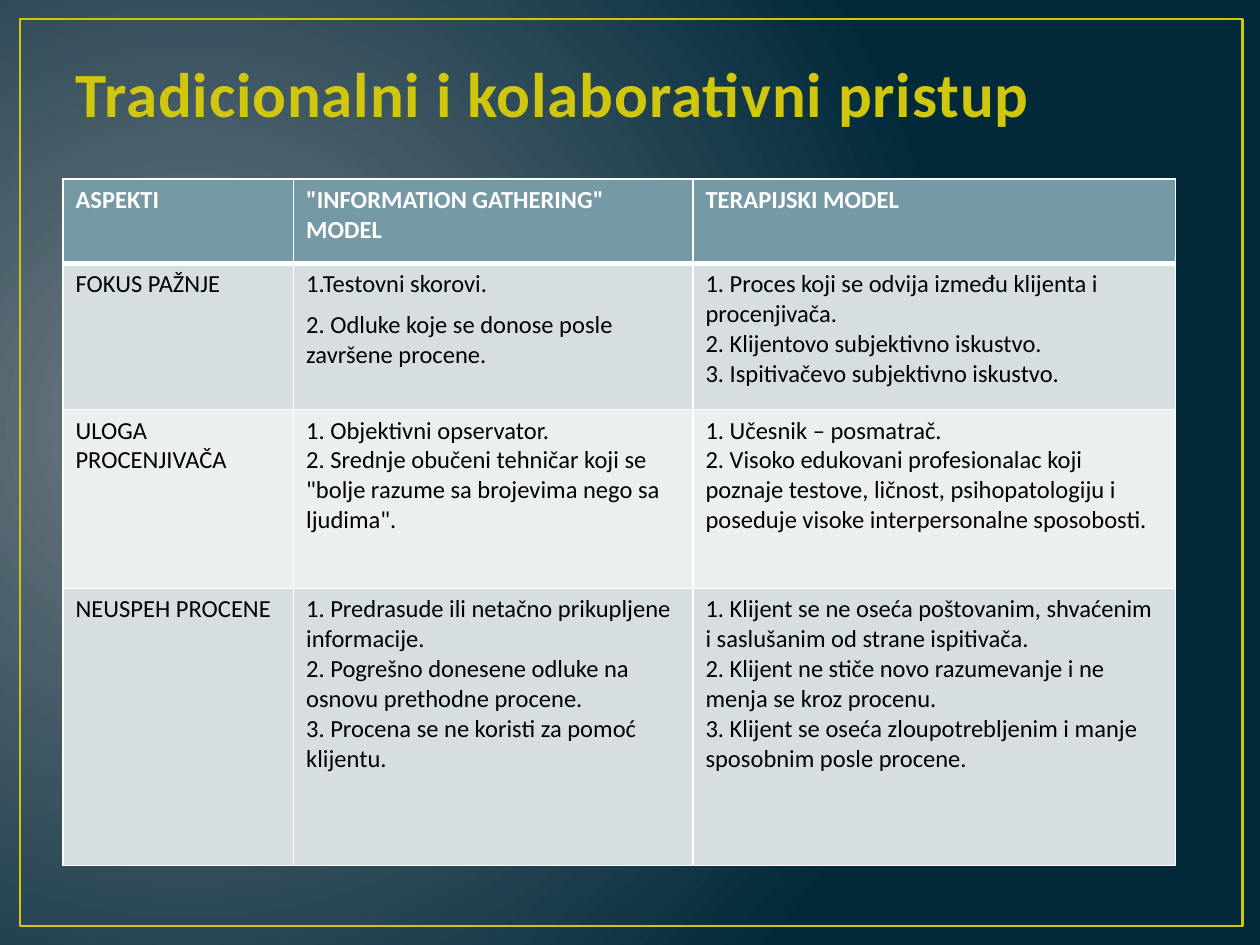
import copy

import pptx
import pptx.dml.color
import pptx.enum.shapes
import pptx.enum.text
import pptx.oxml
import pptx.oxml.ns
import pptx.util
from pptx.util import Inches

RGBColor = pptx.dml.color.RGBColor
YELLOW = RGBColor(0xCF, 0xC6, 0x0D)
WHITE = RGBColor(0xFF, 0xFF, 0xFF)
BLACK = RGBColor(0x00, 0x00, 0x00)
SLATE = RGBColor(0x38, 0x4F, 0x55)
HEADER = RGBColor(0x75, 0x9A, 0xA5)
BANDS = [RGBColor(0xEC, 0xEF, 0xF0), RGBColor(0xD6, 0xDE, 0xE1)]
GLOW = RGBColor(0x71, 0x7C, 0x84)
NAVY = RGBColor(0x01, 0x29, 0x3A)
NS = pptx.oxml.ns.nsdecls("a")


def line_xml(tag, color, points):
    return pptx.oxml.parse_xml(
        f'<a:{tag} {NS} w="{pptx.util.Pt(points)}"><a:solidFill>'
        f'<a:srgbClr val="{color}"/></a:solidFill></a:{tag}>')


def format_font(font, **values):
    font.name = "Calibri"
    font.color.rgb = values.pop("color")
    for name, value in values.items():
        setattr(font, name, value)


prs = pptx.Presentation()
prs.slide_width, prs.slide_height = Inches(10), Inches(7.5)
s = prs.slides.add_slide(prs.slide_layouts[5])

# Background: circular glow from the left
s.background.fill.solid()
solid = s.background.fill._xPr.find(pptx.oxml.ns.qn("a:solidFill"))
solid.getparent().replace(solid, pptx.oxml.parse_xml(
    f'<a:gradFill {NS} rotWithShape="1"><a:gsLst>'
    f'<a:gs pos="0"><a:srgbClr val="{GLOW}"/></a:gs>'
    f'<a:gs pos="100000"><a:srgbClr val="{NAVY}"/></a:gs></a:gsLst>'
    '<a:path path="circle"><a:fillToRect l="15000" t="50000" r="85000" b="60000"/>'
    '</a:path></a:gradFill>'))

# Frame
frame = s.shapes.add_shape(pptx.enum.shapes.MSO_SHAPE.RECTANGLE,
                           Inches(0.16), Inches(0.15), Inches(9.7), Inches(7.2))
frame.shadow.inherit = False
frame.fill.background()
frame.line.color.rgb = YELLOW
frame.line.width = pptx.util.Pt(1.5)

# Title
title = s.shapes.title
title.left, title.top = Inches(0.5), Inches(0.3)
title.width, title.height = Inches(9), Inches(0.78)
tf = title.text_frame
tf.text = "Tradicionalni i kolaborativni pristup"
tf.vertical_anchor = pptx.enum.text.MSO_ANCHOR.BOTTOM
p = tf.paragraphs[0]
p.alignment = pptx.enum.text.PP_ALIGN.LEFT
r = p.runs[0]
format_font(r.font, color=YELLOW, size=pptx.util.Pt(36), bold=True)
rPr = r._r.get_or_add_rPr()
rPr.set("spc", "50")
rPr.insert(0, line_xml("ln", SLATE, 1.05))

# Table: each cell is a list of paragraphs, \n is a line break
COLUMNS = [1.83, 3.17, 3.83]
ROWS = [0.67, 1.16, 1.42, 2.2]
CELLS = [
    [["ASPEKTI"], ['"INFORMATION GATHERING" MODEL'], ["TERAPIJSKI MODEL"]],
    [["FOKUS PAŽNJE"],
     ["1.Testovni skorovi.", "2. Odluke koje se donose posle završene procene."],
     ["1. Proces koji se odvija između klijenta i procenjivača. \n"
      "2. Klijentovo subjektivno iskustvo. \n"
      "3. Ispitivačevo subjektivno iskustvo."]],
    [["ULOGA PROCENJIVAČA"],
     ["1. Objektivni opservator. \n"
      '2. Srednje obučeni tehničar koji se "bolje razume sa brojevima nego sa ljudima".'],
     ["1. Učesnik – posmatrač. \n"
      "2. Visoko edukovani profesionalac koji poznaje testove, ličnost, "
      "psihopatologiju i poseduje visoke interpersonalne sposobosti."]],
    [["NEUSPEH PROCENE"],
     ["1. Predrasude ili netačno prikupljene informacije. \n"
      "2. Pogrešno donesene odluke na osnovu prethodne procene. \n"
      "3. Procena se ne koristi za pomoć klijentu."],
     ["1. Klijent se ne oseća poštovanim, shvaćenim i saslušanim od strane ispitivača. \n"
      "2. Klijent ne stiče novo razumevanje i ne menja se kroz procenu. \n"
      "3. Klijent se oseća zloupotrebljenim i manje sposobnim posle procene."]],
]
table = s.shapes.add_table(len(ROWS), len(COLUMNS), Inches(0.5), Inches(1.42),
                           Inches(sum(COLUMNS)), Inches(sum(ROWS))).table
for column, width in zip(table.columns, COLUMNS):
    column.width = Inches(width)

for i, height in enumerate(ROWS):
    table.rows[i].height = Inches(height)
    is_header = i == 0
    for j, paragraphs in enumerate(CELLS[i]):
        cell = table.cell(i, j)
        cell.fill.solid()
        cell.fill.fore_color.rgb = HEADER if is_header else BANDS[i % 2]
        borders = {"lnL": 1, "lnR": 1, "lnT": 3 if i == 1 else 1,
                   "lnB": 3 if is_header else 1}
        for k, (tag, points) in enumerate(borders.items()):
            cell._tc.get_or_add_tcPr().insert(k, line_xml(tag, WHITE, points))
        tf = cell.text_frame
        for k, text in enumerate(paragraphs):
            p = tf.add_paragraph() if k else tf.paragraphs[0]
            p.text = text
            if not is_header:
                p.space_before = pptx.util.Pt(6)
            for r in p.runs:
                format_font(r.font, color=WHITE if is_header else BLACK,
                            size=pptx.util.Pt(14), bold=is_header)
            # Line breaks take the format of the text around them
            for br in p._p.findall(pptx.oxml.ns.qn("a:br")):
                br.append(copy.deepcopy(p.runs[0]._r.get_or_add_rPr()))

prs.save("out.pptx")
